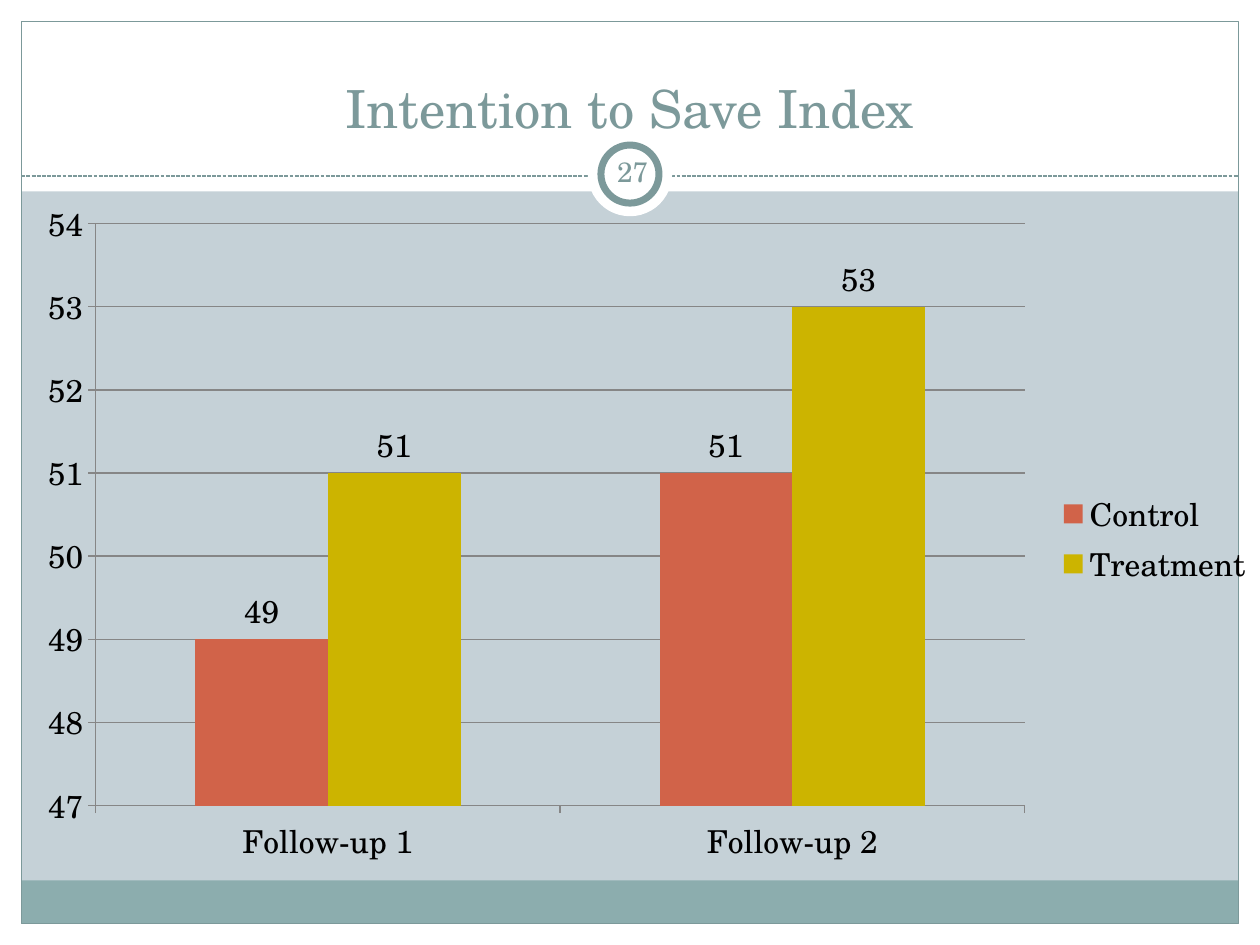
from dataclasses import dataclass

from lxml import etree
from pptx import Presentation
from pptx.chart.data import CategoryChartData
from pptx.dml.color import RGBColor
from pptx.enum.chart import XL_CHART_TYPE as CHART, XL_LEGEND_POSITION as LEGEND
from pptx.enum.chart import XL_LABEL_POSITION as LABEL, XL_TICK_MARK as TICK
from pptx.enum.dml import MSO_LINE as DASH
from pptx.enum.shapes import MSO_CONNECTOR as CONN, MSO_SHAPE as SHAPE
from pptx.enum.text import MSO_ANCHOR as ANCHOR, PP_ALIGN as ALIGN
from pptx.oxml.ns import qn
from pptx.util import Cm, Pt


@dataclass(frozen=True)
class Theme:
    font: str = "TeX Gyre Schola"
    title: int = 30
    number: int = 16
    chart: int = 18
    background: str = "C5D1D7"
    white: str = "FFFFFF"
    black: str = "000000"
    accent: str = "7C999A"
    footer: str = "8CADAE"
    grid: str = "868686"
    series: tuple = ("D16349", "CCB400")


def rgb(value):
    return RGBColor.from_string(value)


class SlideBuilder:
    def __init__(self, slide, theme):
        self.s, self.theme = slide, theme
        fill = slide.background.fill
        fill.solid()
        fill.fore_color.rgb = rgb(theme.background)

    def shape(self, kind, box, fill=None, line=None, width=0.75):
        sp = self.s.shapes.add_shape(kind, *map(Cm, box))
        sp.shadow.inherit = False
        if fill:
            sp.fill.solid()
            sp.fill.fore_color.rgb = rgb(fill)
        else:
            sp.fill.background()
        if line:
            sp.line.color.rgb = rgb(line)
            sp.line.width = Pt(width)
        else:
            sp.line.fill.background()

    def circle(self, x, y, size, **style):
        self.shape(SHAPE.OVAL, (x - size / 2, y - size / 2, size, size), **style)

    def dashed_line(self, x1, x2, y):
        c = self.s.shapes.add_connector(CONN.STRAIGHT, Cm(x1), Cm(y), Cm(x2), Cm(y))
        c.line.color.rgb = rgb(self.theme.accent)
        c.line.width = Pt(0.75)
        c.line.dash_style = DASH.SQUARE_DOT
        etree.SubElement(c._element.spPr, qn("a:effectLst"))

    def text(self, text, box, size, anchor, inset):
        tf = self.s.shapes.add_textbox(*map(Cm, box)).text_frame
        tf.word_wrap = True
        tf.vertical_anchor = anchor
        tf.margin_left = tf.margin_right = tf.margin_top = tf.margin_bottom = Cm(inset)
        p = tf.paragraphs[0]
        p.text = text
        p.alignment = ALIGN.CENTER
        p.font.name, p.font.size = self.theme.font, Pt(size)
        p.font.color.rgb = rgb(self.theme.accent)

    def place(self, part, index, box, inner=False):
        """Set a fixed layout, in fractions of the chart's size."""
        for old in part.findall(qn("c:layout")):
            part.remove(old)
        layout = etree.Element(qn("c:layout"))
        manual = etree.SubElement(layout, qn("c:manualLayout"))
        settings = [("layoutTarget", "inner")] if inner else []
        settings += [("xMode", "edge"), ("yMode", "edge"), *zip("xywh", box)]
        for tag, value in settings:
            etree.SubElement(manual, qn(f"c:{tag}")).set("val", str(value))
        part.insert(index, layout)

    def column_chart(self, box, categories, series, low, high):
        t = self.theme
        data = CategoryChartData(number_format="0")
        data.categories = categories
        for name, values in series.items():
            data.add_series(name, values)
        chart = self.s.shapes.add_chart(
            CHART.COLUMN_CLUSTERED, *map(Cm, box), data).chart
        chart.has_title = False
        chart.font.name, chart.font.size = t.font, Pt(t.chart)
        chart.font.color.rgb = rgb(t.black)

        # Axes and gridlines
        value_axis = chart.value_axis
        value_axis.minimum_scale, value_axis.maximum_scale = low, high
        value_axis.major_unit = 1
        value_axis.has_major_gridlines = True
        value_axis.tick_labels.number_format = "#,##0"
        value_axis.tick_labels.number_format_is_linked = False
        for axis in (value_axis, chart.category_axis):
            axis.major_tick_mark, axis.minor_tick_mark = TICK.OUTSIDE, TICK.NONE
        for part in (value_axis, chart.category_axis, value_axis.major_gridlines):
            part.format.line.color.rgb = rgb(t.grid)
            part.format.line.width = Pt(0.75)

        # Columns and their values
        plot = chart.plots[0]
        plot.gap_width, plot.overlap = 150, 0
        plot.vary_by_categories = False
        for column, color in zip(plot.series, t.series):
            column.format.fill.solid()
            column.format.fill.fore_color.rgb = rgb(color)
            labels = column.data_labels
            labels.show_value = True
            labels.number_format, labels.number_format_is_linked = "0", False
            labels.position = LABEL.OUTSIDE_END

        # Legend and layout
        chart.has_legend = True
        chart.legend.position = LEGEND.RIGHT
        chart.legend.include_in_layout = False
        root = chart._chartSpace
        self.place(root.find(".//" + qn("c:plotArea")), 0,
                   (0.06, 0.05, 0.75, 0.84), inner=True)
        self.place(root.find(".//" + qn("c:legend")), 1, (0.83, 0.43, 0.17, 0.15))


def main():
    theme = Theme()
    prs = Presentation()
    width, height, margin = 25.4, 19.05, 0.43
    prs.slide_width, prs.slide_height = Cm(width), Cm(height)
    b = SlideBuilder(prs.slides.add_slide(prs.slide_layouts[6]), theme)
    inner_w, bottom = width - 2 * margin, height - margin

    # White margins and title band
    for box in ((0, bottom, width, margin), (0, 0, width, 3.86),
                (0, 0, margin, height), (width - margin, 0, margin, height)):
        b.shape(SHAPE.RECTANGLE, box, fill=theme.white)

    # Footer band, frame and divider
    b.shape(SHAPE.RECTANGLE, (margin, 17.75, inner_w, bottom - 17.75), fill=theme.footer)
    b.shape(SHAPE.RECTANGLE, (margin, margin, inner_w, bottom - margin), line=theme.accent)
    b.dashed_line(margin, width - margin, 3.55)

    # Number badge
    b.circle(width / 2, 3.51, 1.7, fill=theme.white)
    b.circle(width / 2, 3.51, 1.17, fill=theme.white, line=theme.accent, width=4)

    # Title and slide number
    b.text("Intention to Save Index", (0, 0.84, width, 2.1), theme.title,
           ANCHOR.BOTTOM, 0.13)
    b.text("27", (12.12, 2.84, 1.27, 1.22), theme.number, ANCHOR.MIDDLE, 0.13)

    # Chart
    b.column_chart((margin, 3.81, width - margin, 13.97),
                   ("Follow-up 1", "Follow-up 2"),
                   {"Control": (49, 51), "Treatment": (51, 53)}, 47, 54)
    prs.save("out.pptx")


if __name__ == "__main__":
    main()
